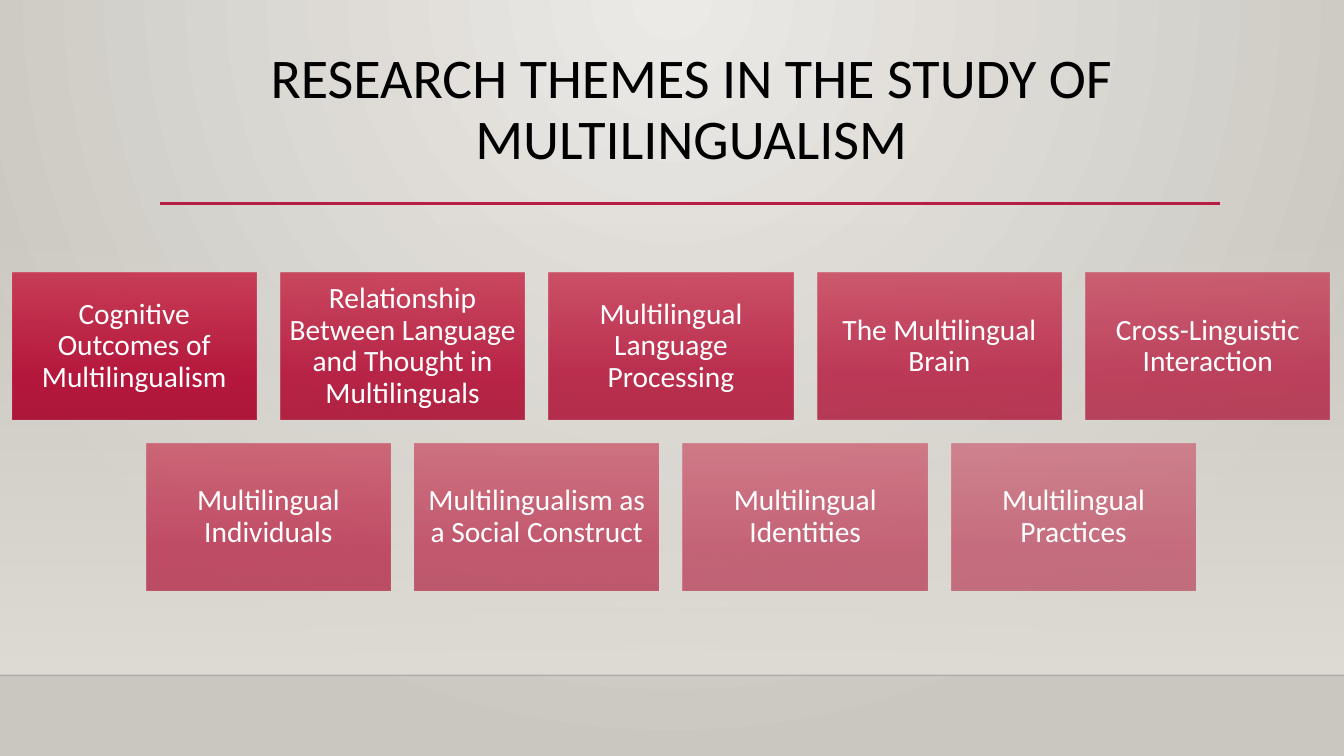
from lxml import etree
from pptx import Presentation
from pptx.dml.color import RGBColor
from pptx.enum.shapes import MSO_CONNECTOR, MSO_SHAPE
from pptx.enum.text import MSO_ANCHOR, MSO_AUTO_SIZE, PP_ALIGN
from pptx.oxml.ns import qn
from pptx.util import Inches, Pt

COLORS = {
    "center": "ECEAE7", "edge": "CAC7C1", "wall": "DFDBD5", "floor": "000001",
    "accent": "B71E42", "title": "000000", "tile_text": "FFFFFF",
    "tile_top": "C7304C", "tile_middle": "B3062F", "tile_bottom": "AA062C",
}
FONT = "Calibri"
THEME_ROWS = [
    ["Cognitive Outcomes of Multilingualism",
     "Relationship Between Language and Thought in Multilinguals",
     "Multilingual Language Processing",
     "The Multilingual Brain",
     "Cross-Linguistic Interaction"],
    ["Multilingual Individuals",
     "Multilingualism as a Social Construct",
     "Multilingual Identities",
     "Multilingual Practices"],
]


def color(name):
    return RGBColor.from_string(COLORS[name])


def add_alpha(color_element, percent):
    etree.SubElement(color_element, qn("a:alpha"), val=str(percent * 1000))


def set_gradient(fill, element, stops, focus=None):
    """Fill with (position, color, opacity) stops, downwards or around a focus."""
    fill.solid()
    solid = element.find(".//" + qn("a:solidFill"))
    gradient = etree.Element(qn("a:gradFill"), rotWithShape="1")
    stop_list = etree.SubElement(gradient, qn("a:gsLst"))
    for position, name, opacity in stops:
        stop = etree.SubElement(stop_list, qn("a:gs"), pos=str(position * 1000))
        stop_color = etree.SubElement(stop, qn("a:srgbClr"), val=COLORS[name])
        add_alpha(stop_color, opacity)
    if focus:
        circle = etree.SubElement(gradient, qn("a:path"), path="circle")
        sides = {side: str(percent * 1000) for side, percent in zip("ltrb", focus)}
        etree.SubElement(circle, qn("a:fillToRect"), **sides)
    else:
        etree.SubElement(gradient, qn("a:lin"), ang="5400000", scaled="0")
    solid.getparent().replace(solid, gradient)


def add_box(slide, left, top, width, height, stops):
    shape = slide.shapes.add_shape(
        MSO_SHAPE.RECTANGLE, Inches(left), Inches(top), Inches(width), Inches(height))
    shape.shadow.inherit = False
    shape.line.fill.background()
    set_gradient(shape.fill, shape.element, stops)
    return shape


def add_rule(slide, left, top, width, name, weight):
    rule = slide.shapes.add_connector(
        MSO_CONNECTOR.STRAIGHT, Inches(left), Inches(top), Inches(left + width), Inches(top))
    rule.line.color.rgb = color(name)
    rule.line.width = Pt(weight)
    etree.SubElement(rule.element.spPr, qn("a:effectLst"))
    return rule


def format_text(text_frame, size, name, anchor):
    text_frame.word_wrap = True
    text_frame.auto_size = MSO_AUTO_SIZE.NONE
    text_frame.vertical_anchor = anchor
    paragraph = text_frame.paragraphs[0]
    paragraph.alignment = PP_ALIGN.CENTER
    paragraph.line_spacing = 0.9
    for run in paragraph.runs:
        run.font.name = FONT
        run.font.size = Pt(size)
        run.font.color.rgb = color(name)


def add_backdrop(slide, width, wall_top, floor_top):
    set_gradient(slide.background.fill, slide.element,
                 [(0, "center", 100), (100, "edge", 100)], focus=(43, 0, 43, 100))
    add_box(slide, 0, wall_top, width, floor_top - wall_top,
            [(0, "wall", 0), (100, "wall", 100)])
    floor_line = add_rule(slide, 0, floor_top, width, "floor", 1)
    add_alpha(floor_line.element.find(".//" + qn("a:srgbClr")), 20)


def add_heading(slide, left, top, width, height):
    title = slide.shapes.title
    title.left, title.top = Inches(left), Inches(top)
    title.width, title.height = Inches(width), Inches(height)
    title.text_frame.text = "RESEARCH THEMES IN THE STUDY OF MULTILINGUALISM"
    format_text(title.text_frame, 40, "title", MSO_ANCHOR.TOP)
    add_rule(slide, left - 0.03, top + height - 0.01, width + 0.04, "accent", 2.5)


def add_tile(slide, left, top, width, height, text, opacity):
    tile = add_box(slide, left, top, width, height,
                   [(0, "tile_top", opacity), (69, "tile_middle", opacity),
                    (100, "tile_bottom", opacity)])
    text_frame = tile.text_frame
    text_frame.text = text
    text_frame.margin_left = text_frame.margin_right = Inches(0.09)
    text_frame.margin_top = text_frame.margin_bottom = Inches(0.09)
    format_text(text_frame, 21, "tile_text", MSO_ANCHOR.MIDDLE)


def add_theme_grid(slide, left, top, width, height):
    gap = 0.24
    columns = max(len(row) for row in THEME_ROWS)
    tile_width = (width - (columns - 1) * gap) / columns
    tile_height = (height - (len(THEME_ROWS) - 1) * gap) / len(THEME_ROWS)
    opacity = 90
    for row_index, row in enumerate(THEME_ROWS):
        # Shorter rows are centred; each tile is paler than the one before
        row_left = left + (columns - len(row)) * (tile_width + gap) / 2
        row_top = top + row_index * (tile_height + gap)
        for column, text in enumerate(row):
            add_tile(slide, row_left + column * (tile_width + gap), row_top,
                     tile_width, tile_height, text, opacity)
            opacity -= 5


def main():
    presentation = Presentation()
    presentation.slide_width = Inches(13.33)
    presentation.slide_height = Inches(7.5)
    slide = presentation.slides.add_slide(presentation.slide_layouts[5])
    add_backdrop(slide, 13.33, 2.21, 6.7)
    add_heading(slide, 1.62, 0.45, 10.47, 1.58)
    add_theme_grid(slide, 0.12, 2.71, 13.07, 3.15)
    presentation.save("out.pptx")


if __name__ == "__main__":
    main()
